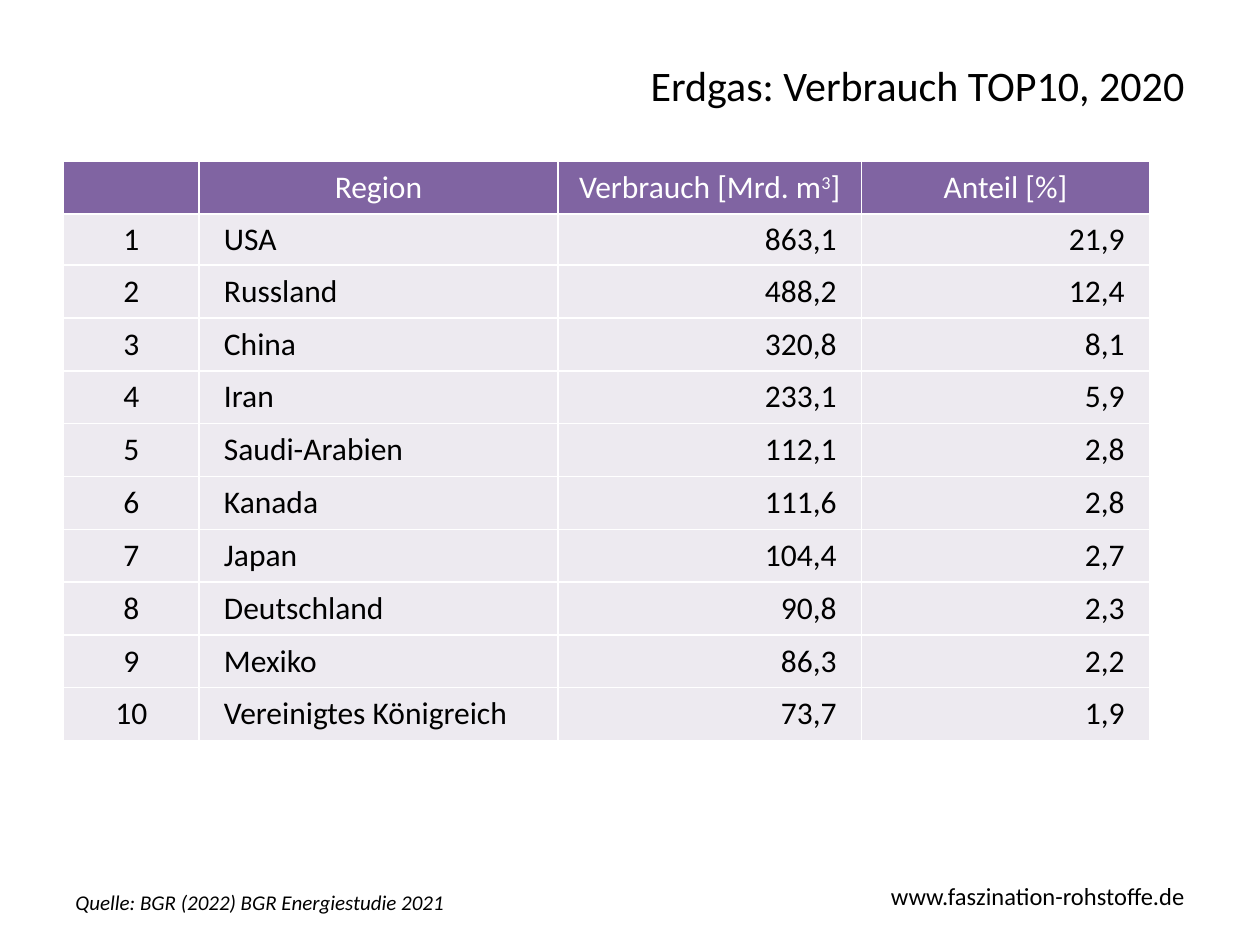
from dataclasses import dataclass

from lxml import etree
from pptx import Presentation
from pptx.dml.color import RGBColor
from pptx.enum.text import MSO_ANCHOR, PP_ALIGN
from pptx.oxml.ns import qn
from pptx.util import Pt

LEFT, CENTER, RIGHT = PP_ALIGN.LEFT, PP_ALIGN.CENTER, PP_ALIGN.RIGHT
TOP, MIDDLE = MSO_ANCHOR.TOP, MSO_ANCHOR.MIDDLE


@dataclass(frozen=True)
class Theme:
    font: str = "Calibri"
    ink: str = "000000"
    paper: str = "FFFFFF"
    header: str = "8064A2"
    body: str = "EDEAF0"
    title_size: float = 24
    table_size: float = 18
    site_size: float = 14
    source_size: float = 12
    border: float = 1


def write(paragraph, text, *, font, size, color, align=LEFT, italic=False, baseline=None):
    paragraph.alignment = align
    run = paragraph.add_run()
    run.text = text
    run.font.name = font
    run.font.size = Pt(size)
    run.font.color.rgb = RGBColor.from_string(color)
    run.font.italic = italic
    if baseline:
        run.font._element.set("baseline", str(baseline * 1000))


class SlideBuilder:
    def __init__(self, slide, theme):
        self.slide = slide
        self.theme = theme

    def text(self, words, left, top, width, height, size, anchor=TOP, **style):
        frame = self.slide.shapes.add_textbox(
            Pt(left), Pt(top), Pt(width), Pt(height)).text_frame
        frame.word_wrap = True
        frame.vertical_anchor = anchor
        write(frame.paragraphs[0], words, font=self.theme.font, size=size,
              color=self.theme.ink, **style)

    def table(self, left, top, widths, heights):
        table = self.slide.shapes.add_table(
            len(heights), len(widths), Pt(left), Pt(top),
            Pt(sum(widths)), Pt(sum(heights))).table
        table.horz_banding = False
        for column, width in zip(table.columns, widths):
            column.width = Pt(width)
        for row, height in zip(table.rows, heights):
            row.height = Pt(height)
        return table

    def cell(self, cell, parts, fill, color, align, inset):
        self.borders(cell)
        cell.fill.solid()
        cell.fill.fore_color.rgb = RGBColor.from_string(fill)
        cell.vertical_anchor = MIDDLE
        cell.margin_left = cell.margin_right = Pt(inset)
        cell.margin_top = cell.margin_bottom = 0
        for words, baseline in parts:
            write(cell.text_frame.paragraphs[0], words, font=self.theme.font,
                  size=self.theme.table_size, color=color, align=align,
                  baseline=baseline)

    def borders(self, cell):
        properties = cell._tc.get_or_add_tcPr()
        for side in ("a:lnL", "a:lnR", "a:lnT", "a:lnB"):
            line = etree.SubElement(properties, qn(side), w=str(Pt(self.theme.border)))
            fill = etree.SubElement(line, qn("a:solidFill"))
            etree.SubElement(fill, qn("a:srgbClr"), val=self.theme.paper)


HEADINGS = [
    [],
    [("Region", None)],
    [("Verbrauch [Mrd. m", None), ("3", 30), ("]", None)],
    [("Anteil [%]", None)],
]
CONSUMERS = [
    ("USA", "863,1", "21,9"),
    ("Russland", "488,2", "12,4"),
    ("China", "320,8", "8,1"),
    ("Iran", "233,1", "5,9"),
    ("Saudi-Arabien", "112,1", "2,8"),
    ("Kanada", "111,6", "2,8"),
    ("Japan", "104,4", "2,7"),
    ("Deutschland", "90,8", "2,3"),
    ("Mexiko", "86,3", "2,2"),
    ("Vereinigtes Königreich", "73,7", "1,9"),
]
COLUMN_WIDTHS = [77.5, 205, 173.5, 164.6]
ROW_HEIGHTS = [30.2, 29.1] + [30.2] * (len(CONSUMERS) - 1)
COLUMN_FORMATS = [(CENTER, 0), (LEFT, 14.2), (RIGHT, 14.2), (RIGHT, 14.2)]
HEADER_INSET = 5.4


def main():
    theme = Theme()
    presentation = Presentation()
    presentation.slide_width, presentation.slide_height = Pt(720), Pt(540)
    builder = SlideBuilder(
        presentation.slides.add_slide(presentation.slide_layouts[6]), theme)

    builder.text("www.faszination-rohstoffe.de", 448.6, 499.7, 235.4, 24.5,
                 theme.site_size, align=RIGHT)
    builder.text("Erdgas: Verbrauch TOP10, 2020", 162.7, 26.6, 521.3, 43.2,
                 theme.title_size, anchor=MIDDLE, align=RIGHT)
    builder.text("Quelle: BGR (2022) BGR Energiestudie 2021", 36, 504.7, 463, 21.6,
                 theme.source_size, italic=True)

    ranking = builder.table(36.3, 92.2, COLUMN_WIDTHS, ROW_HEIGHTS)
    for column, heading in enumerate(HEADINGS):
        builder.cell(ranking.cell(0, column), heading, theme.header,
                     theme.paper, CENTER, HEADER_INSET)
    for rank, consumer in enumerate(CONSUMERS, start=1):
        for column, value in enumerate((str(rank), *consumer)):
            builder.cell(ranking.cell(rank, column), [(value, None)], theme.body,
                         theme.ink, *COLUMN_FORMATS[column])

    presentation.save("out.pptx")


if __name__ == "__main__":
    main()
